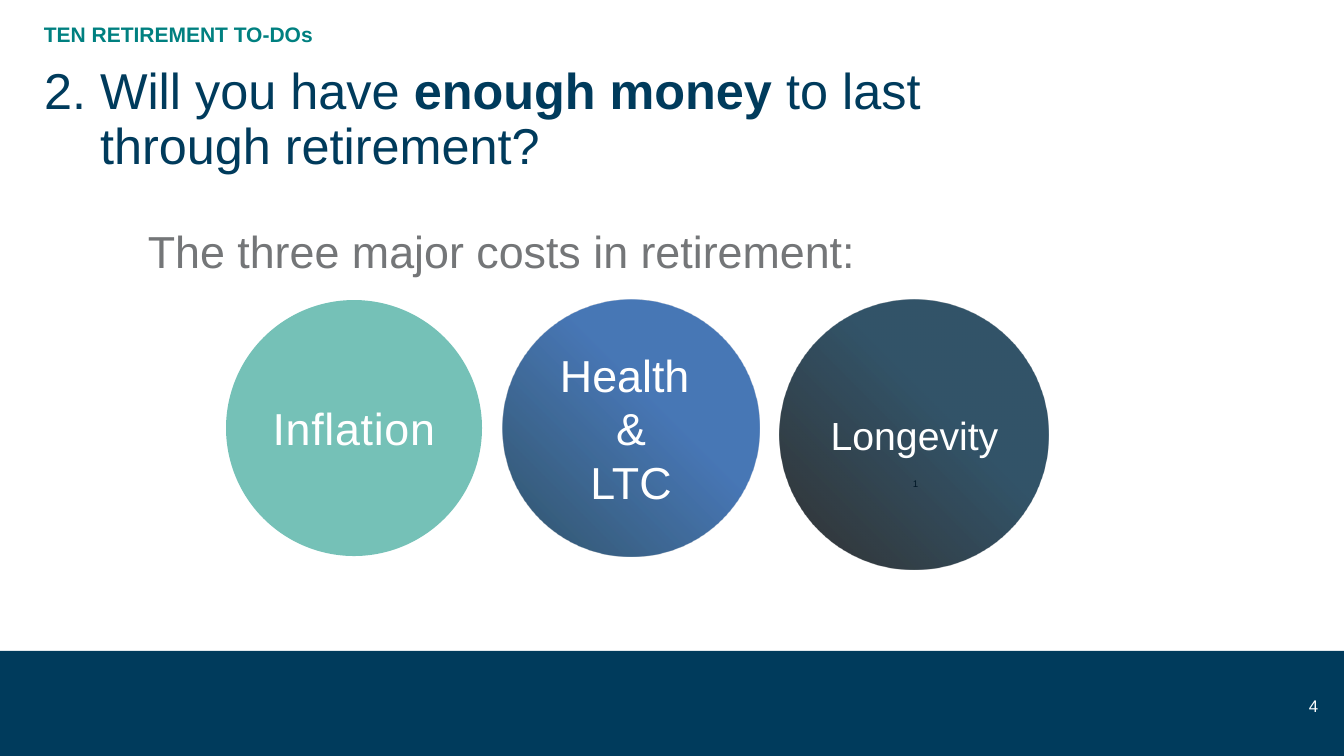
from dataclasses import dataclass

from lxml import etree
from pptx import Presentation
from pptx.dml.color import RGBColor
from pptx.enum.shapes import MSO_SHAPE
from pptx.enum.text import MSO_ANCHOR, MSO_AUTO_SIZE, PP_ALIGN
from pptx.oxml.ns import qn
from pptx.util import Emu, Pt

OVAL, RECT = MSO_SHAPE.OVAL, MSO_SHAPE.RECTANGLE
LEFT, CENTER, RIGHT = PP_ALIGN.LEFT, PP_ALIGN.CENTER, PP_ALIGN.RIGHT
TOP, MIDDLE = MSO_ANCHOR.TOP, MSO_ANCHOR.MIDDLE
NO_FIT = MSO_AUTO_SIZE.NONE

FONT = "Arial"
NAVY, TEAL, GRAY, WHITE, BLACK = "003B5C", "008080", "747678", "FFFFFF", "000000"
SLIDE_W, SLIDE_H = 1344, 756
BAND_TOP = 651
CIRCLE_LEFT, CIRCLE_TOP, CIRCLE_GAP = 226, 300, 21
TITLE_INDENT = 56


@dataclass
class Label:
    text: str
    box: tuple[int, int, int, int]
    size: int
    color: str
    bold: bool = False
    align: PP_ALIGN = LEFT
    anchor: MSO_ANCHOR = TOP
    wrap: bool = True
    baseline: int = 0


@dataclass
class Circle:
    lines: list[str]
    diameter: int
    colors: list[str]
    size: int = 32
    spacing: int = 0


def px(n: int) -> Emu:
    return Emu(round(n * 914400 / 100.8))


def rgb(color: str) -> RGBColor:
    return RGBColor.from_string(color)


def add_run(p, text: str, size: int, color: str, bold: bool = False):
    r = p.add_run()
    r.text = text
    r.font.name, r.font.size, r.font.bold = FONT, Pt(size), bold
    r.font.color.rgb = rgb(color)
    return r


def add_label(slide, label: Label) -> None:
    tf = slide.shapes.add_textbox(*map(px, label.box)).text_frame
    tf.word_wrap, tf.vertical_anchor = label.wrap, label.anchor
    p = tf.paragraphs[0]
    p.alignment = label.align
    r = add_run(p, label.text, label.size, label.color, label.bold)
    if label.baseline:
        r.font._element.set("baseline", str(label.baseline * 1000))


def add_plain_shape(slide, kind: MSO_SHAPE, x: int, y: int, w: int, h: int):
    sp = slide.shapes.add_shape(kind, px(x), px(y), px(w), px(h))
    sp.shadow.inherit = False
    sp.line.fill.background()
    return sp


def fill_shape(sp, colors: list[str]) -> None:
    """One colour gives a solid fill, two a translucent diagonal gradient."""
    if len(colors) == 1:
        sp.fill.solid()
        sp.fill.fore_color.rgb = rgb(colors[0])
        return
    sp.fill.gradient()
    sp.fill.gradient_angle = 45
    for stop, color, position in zip(sp.fill.gradient_stops, colors, (0, 0.6)):
        stop.color.rgb = rgb(color)
        stop.position = position
    for clr in sp._element.spPr.iter(qn("a:srgbClr")):
        etree.SubElement(clr, qn("a:alpha")).set("val", "80000")


def add_circle(slide, circle: Circle, x: int) -> None:
    d = circle.diameter
    sp = add_plain_shape(slide, OVAL, x, CIRCLE_TOP, d, d)
    fill_shape(sp, circle.colors)
    tf = sp.text_frame
    tf.margin_left = tf.margin_right = tf.margin_top = tf.margin_bottom = 0
    tf.word_wrap, tf.vertical_anchor = True, MIDDLE
    p = tf.paragraphs[0]
    p.alignment = CENTER
    for i, line in enumerate(circle.lines):
        if i:
            p.add_line_break()
        r = add_run(p, line, circle.size, WHITE)
        if circle.spacing:
            r.font._element.set("spc", str(circle.spacing))


def add_title(slide) -> None:
    title = slide.shapes.title
    title.left, title.top, title.width, title.height = map(px, (34, 61, 1132, 134))
    tf = title.text_frame
    tf.word_wrap, tf.auto_size, tf.vertical_anchor = True, NO_FIT, TOP
    first, second = tf.paragraphs[0], tf.add_paragraph()
    for p in (first, second):
        p.alignment, p.line_spacing = LEFT, 0.9
    second._p.get_or_add_pPr().set("marL", str(px(TITLE_INDENT)))
    add_run(first, "2. Will you have ", 36, NAVY)
    add_run(first, "enough money ", 36, NAVY, bold=True)
    add_run(first, "to last", 36, NAVY)
    add_run(second, "through retirement?", 36, NAVY)


LABELS = [
    Label("TEN RETIREMENT TO-DOs", (34, 17, 674, 35), 15, TEAL, bold=True),
    Label("4", (1213, 691, 115, 30), 12, WHITE, align=RIGHT),
    Label("1", (903, 471, 27, 30), 12, BLACK, wrap=False, baseline=30),
    Label("The three major costs in retirement:", (138, 209, 763, 83), 32, GRAY,
          anchor=MIDDLE),
]
CIRCLES = [
    Circle(["Inflation"], 256, ["75C1B7"], spacing=50),
    Circle(["Health ", "&", "LTC"], 256, ["002B45", "1C57A5"]),
    Circle(["Longevity"], 269, ["000000", "002B45"], size=28),
]


def main() -> None:
    prs = Presentation()
    prs.slide_width, prs.slide_height = px(SLIDE_W), px(SLIDE_H)
    slide = prs.slides.add_slide(prs.slide_layouts.get_by_name("Title Only"))
    add_title(slide)

    # Footer band
    band = add_plain_shape(slide, RECT, 0, BAND_TOP, SLIDE_W, SLIDE_H - BAND_TOP)
    fill_shape(band, [NAVY])

    for label in LABELS:
        add_label(slide, label)

    # Row of cost circles
    x = CIRCLE_LEFT
    for circle in CIRCLES:
        add_circle(slide, circle, x)
        x += circle.diameter + CIRCLE_GAP

    prs.save("out.pptx")


if __name__ == "__main__":
    main()
